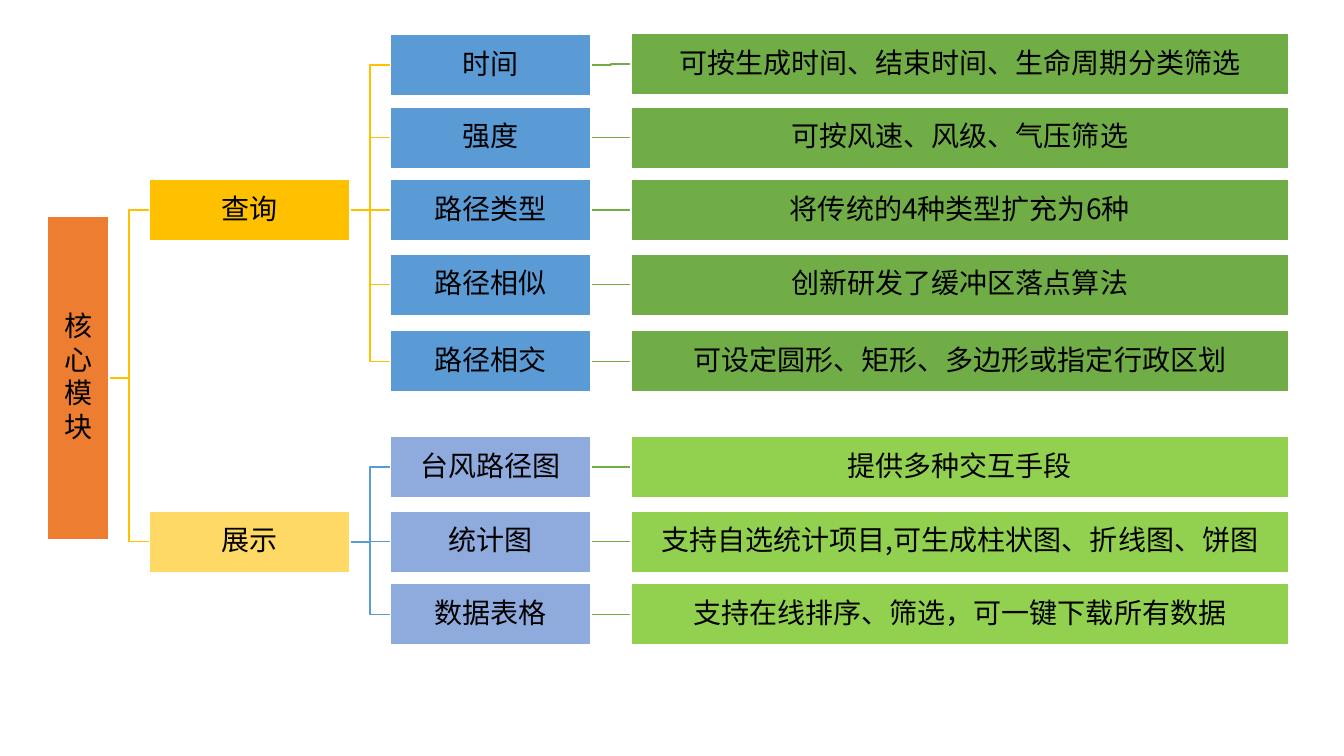
import pptx
import pptx.util
import pptx.dml.color
import pptx.enum.shapes
import pptx.enum.text
import pptx.oxml.ns
import lxml.etree

PX = 9144  # one px is a hundredth of an inch
FONT = "Noto Sans CJK SC"
BOX_HEIGHT = 61
RIGHT, LEFT = 3, 1  # connection sites

COLOURS = {
    "text": "000000", "border": "FFFFFF", "root": "ED7D31",
    "query": "FFC000", "display": "FFD966",
    "query_topic": "5B9BD5", "display_topic": "8FAADC",
    "query_detail": "70AD47", "display_detail": "92D050",
    "root_link": "FFC000", "query_link": "FFC000",
    "display_link": "5B9BD5", "detail_link": "70AD47",
}

# Column: left, width
ROOT_COLUMN = (47, 61)
BRANCH_COLUMN = (148, 199)
TOPIC_COLUMN = (387, 199)
DETAIL_COLUMN = (626, 652)

# Branch: key, title, top, rows of (topic, topic top, detail, detail top)
BRANCHES = [
    ("query", "查询", 178, [
        ("时间", 34, "可按生成时间、结束时间、生命周期分类筛选", 33),
        ("强度", 106, "可按风速、风级、气压筛选", 106),
        ("路径类型", 178, "将传统的4种类型扩充为6种", 178),
        ("路径相似", 252, "创新研发了缓冲区落点算法", 252),
        ("路径相交", 328, "可设定圆形、矩形、多边形或指定行政区划", 328),
    ]),
    ("display", "展示", 507, [
        ("台风路径图", 433, "提供多种交互手段", 433),
        ("统计图", 507, "支持自选统计项目,可生成柱状图、折线图、饼图", 507),
        ("数据表格", 579, "支持在线排序、筛选，可一键下载所有数据", 579),
    ]),
]

FRAME_FORMAT = {
    "margin_left": PX, "margin_right": PX, "margin_top": PX, "margin_bottom": PX,
    "word_wrap": True, "vertical_anchor": pptx.enum.text.MSO_ANCHOR.MIDDLE,
}
PARAGRAPH_FORMAT = {
    "alignment": pptx.enum.text.PP_ALIGN.CENTER,
    "line_spacing": 0.9, "space_after": pptx.util.Pt(2.5),
}
FONT_FORMAT = {"name": FONT, "size": pptx.util.Pt(20)}


def apply_format(target, values):
    for name, value in values.items():
        setattr(target, name, value)


def colour(key):
    return pptx.dml.color.RGBColor.from_string(COLOURS[key])


def add_box(slide, column, top, height, fill, lines):
    """Draw a filled rectangle with one paragraph per line."""
    left, width = column
    box = slide.shapes.add_shape(
        pptx.enum.shapes.MSO_SHAPE.RECTANGLE,
        left * PX, top * PX, width * PX, height * PX)
    box.shadow.inherit = False
    box.fill.solid()
    box.fill.fore_color.rgb = colour(fill)
    box.line.color.rgb = colour("border")
    box.line.width = pptx.util.Pt(1)
    frame = box.text_frame
    apply_format(frame, FRAME_FORMAT)
    for index, line in enumerate(lines):
        paragraph = frame.add_paragraph() if index else frame.paragraphs[0]
        apply_format(paragraph, PARAGRAPH_FORMAT)
        run = paragraph.add_run()
        run.text = line
        apply_format(run.font, FONT_FORMAT)
        run.font.color.rgb = colour("text")
        east_asian = lxml.etree.SubElement(
            run.font._element, pptx.oxml.ns.qn("a:ea"))
        east_asian.set("typeface", FONT)
    return box


def add_link(slide, parent, child, key):
    """Join the right side of parent to the left side of child."""
    kinds = pptx.enum.shapes.MSO_CONNECTOR
    level = parent.top + parent.height // 2 == child.top + child.height // 2
    link = slide.shapes.add_connector(
        kinds.STRAIGHT if level else kinds.ELBOW, 0, 0, 0, 0)
    link.begin_connect(parent, RIGHT)
    link.end_connect(child, LEFT)
    link.line.color.rgb = colour(key)
    link.line.width = pptx.util.Pt(1)
    lxml.etree.SubElement(
        link.element.spPr, pptx.oxml.ns.qn("a:effectLst"))
    # Links lie behind the boxes
    link.element.getparent().insert(2, link.element)


def add_branch(slide, root, key, title, top, rows):
    branch = add_box(slide, BRANCH_COLUMN, top, BOX_HEIGHT, key, [title])
    add_link(slide, root, branch, "root_link")
    for topic_text, topic_top, detail_text, detail_top in rows:
        topic = add_box(slide, TOPIC_COLUMN, topic_top, BOX_HEIGHT,
                        f"{key}_topic", [topic_text])
        detail = add_box(slide, DETAIL_COLUMN, detail_top, BOX_HEIGHT,
                         f"{key}_detail", [detail_text])
        add_link(slide, branch, topic, f"{key}_link")
        add_link(slide, topic, detail, "detail_link")


def main():
    deck = pptx.Presentation()
    deck.slide_width, deck.slide_height = 1333 * PX, 750 * PX
    slide = deck.slides.add_slide(deck.slide_layouts[6])

    # Root of the tree, one character per line
    root = add_box(slide, ROOT_COLUMN, 215, 320, "root", "核心模块")

    # Branches with their topics and details
    for key, title, top, rows in BRANCHES:
        add_branch(slide, root, key, title, top, rows)

    deck.save("out.pptx")


if __name__ == "__main__":
    main()
